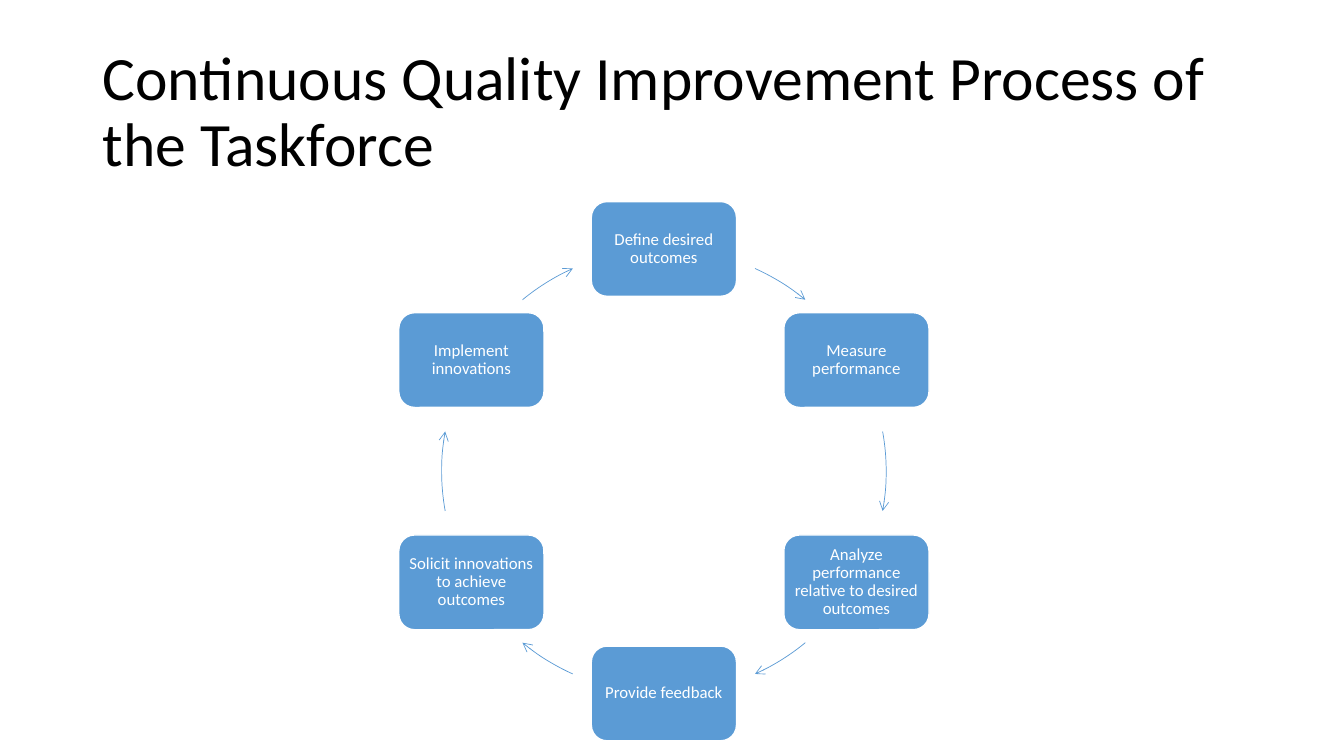
from dataclasses import dataclass
from math import cos, radians, sin

from lxml.etree import SubElement
from pptx import Presentation
from pptx.dml.color import RGBColor as RGB
from pptx.enum.shapes import MSO_SHAPE as SHAPE
from pptx.enum.text import MSO_ANCHOR as ANCHOR, PP_ALIGN as ALIGN
from pptx.oxml.ns import qn
from pptx.util import Pt

EMU_PER_PX = 9144


@dataclass(frozen=True)
class Theme:
    """Colours, font and type sizes of the slide."""
    font: str = "Calibri"
    ink: RGB = RGB(0, 0, 0)
    paper: RGB = RGB(255, 255, 255)
    accent: RGB = RGB(0x5B, 0x9B, 0xD5)
    title_size: int = 44
    step_size: int = 12


THEME = Theme()
STEPS = [
    "Define desired outcomes",
    "Measure performance",
    "Analyze performance relative to desired outcomes",
    "Provide feedback",
    "Solicit innovations to achieve outcomes",
    "Implement innovations",
]
ARCS = [(24.2, 39.5), (79.7, 100.3), (140.5, 155.8),
        (204.2, 219.5), (259.7, 280.3), (320.5, 335.8)]


def px(*lengths):
    """Turn pixel lengths into whole EMU."""
    return [round(n * EMU_PER_PX) for n in lengths]


def write(shape, text, size, color, align, inset):
    """Put one vertically centred paragraph into a shape."""
    tf = shape.text_frame
    tf.word_wrap = True
    tf.vertical_anchor = ANCHOR.MIDDLE
    tf.margin_left, tf.margin_top, tf.margin_right, tf.margin_bottom = px(*inset)
    p = tf.paragraphs[0]
    p.text = text
    p.alignment = align
    p.line_spacing = 0.9
    p.font.name = THEME.font
    p.font.size = Pt(size)
    p.font.color.rgb = color


def add_title(s, text, x, y, w, h):
    """Add the slide heading."""
    box = s.shapes.add_textbox(*px(x, y, w, h))
    write(box, text, THEME.title_size, THEME.ink, ALIGN.LEFT, (10, 5, 10, 5))


def add_step(s, text, x, y, w, h):
    """Add one rounded step of the cycle."""
    sp = s.shapes.add_shape(SHAPE.ROUNDED_RECTANGLE, *px(x, y, w, h))
    sp.shadow.inherit = False
    sp.fill.solid()
    sp.fill.fore_color.rgb = THEME.accent
    sp.line.color.rgb = THEME.paper
    sp.line.width = Pt(1)
    write(sp, text, THEME.step_size, THEME.paper, ALIGN.CENTER, (5, 5, 5, 5))


def add_arc(s, start, end, x, y, w, h):
    """Add a clockwise arrow on the ring, in degrees from its top."""
    sp = s.shapes.add_shape(SHAPE.ARC, *px(x, y, w, h))
    sp.shadow.inherit = False
    sp.fill.background()
    sp.line.color.rgb = THEME.accent
    sp.line.width = Pt(0.5)
    for i, angle in enumerate((start, end)):
        sp.adjustments[i] = (angle - 90) % 360 * 0.6
    SubElement(sp.line._get_or_add_ln(), qn("a:tailEnd"), type="arrow")


def add_cycle(s, steps, x, y, w, h, step_w=144, step_h=94):
    """Space the steps evenly around the ring and link them with arrows."""
    for i, (text, (start, end)) in enumerate(zip(steps, ARCS)):
        angle = radians(360 / len(steps) * i - 90)
        left = x + w / 2 * (1 + cos(angle)) - step_w / 2
        top = y + h / 2 * (1 + sin(angle)) - step_h / 2
        add_step(s, text, left, top, step_w, step_h)
        add_arc(s, start, end, x, y, w, h)


def main():
    """Build and save the slide."""
    prs = Presentation()
    prs.slide_width, prs.slide_height = px(1333, 750)
    s = prs.slides.add_slide(prs.slide_layouts[6])
    add_title(s, "Continuous Quality Improvement Process of the Taskforce",
              92, 40, 1150, 145)
    add_cycle(s, STEPS, 438, 247, 441, 441)
    prs.save("out.pptx")


if __name__ == "__main__":
    main()
